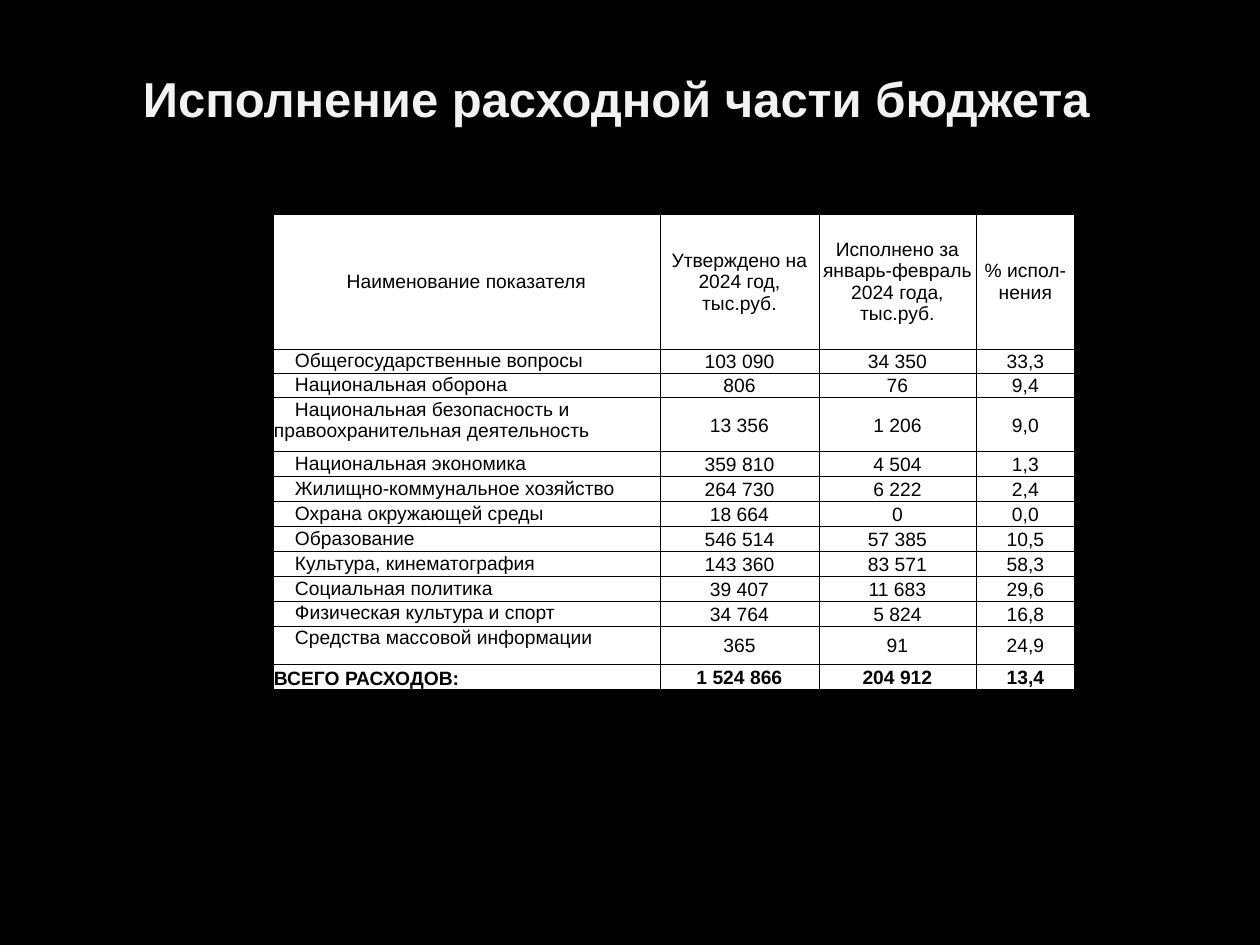
"""Build the slide on budget expenditure with python-pptx."""
from lxml import etree
from pptx import Presentation, util as u
from pptx.dml.color import RGBColor
from pptx.enum import text
from pptx.oxml import ns

BLACK = RGBColor(0x00, 0x00, 0x00)
WHITE = RGBColor(0xFF, 0xFF, 0xFF)
PALE = RGBColor(0xF2, 0xF2, 0xF2)
LEFT, CENTER = text.PP_ALIGN.LEFT, text.PP_ALIGN.CENTER
TOP, MIDDLE, BOTTOM = text.MSO_ANCHOR.TOP, text.MSO_ANCHOR.MIDDLE, text.MSO_ANCHOR.BOTTOM


def px(n):
    return u.Emu(round(n * 914400 / 126))


def write(paragraph, words, size, color, bold, align):
    paragraph.alignment = align
    run = paragraph.add_run()
    run.text = words
    run.font.color.rgb = color
    for key, value in {"name": "Arial", "size": u.Pt(size), "bold": bold}.items():
        setattr(run.font, key, value)


BUDGET = [
    ("Наименование показателя", "Утверждено на 2024 год, тыс.руб.",
     "Исполнено за январь-февраль 2024 года, тыс.руб.", "% испол-нения"),
    ("Общегосударственные вопросы", "103 090", "34 350", "33,3"),
    ("Национальная оборона", "806", "76", "9,4"),
    ("Национальная безопасность и правоохранительная деятельность", "13 356", "1 206", "9,0"),
    ("Национальная экономика", "359 810", "4 504", "1,3"),
    ("Жилищно-коммунальное хозяйство", "264 730", "6 222", "2,4"),
    ("Охрана окружающей среды", "18 664", "0", "0,0"),
    ("Образование", "546 514", "57 385", "10,5"),
    ("Культура, кинематография", "143 360", "83 571", "58,3"),
    ("Социальная политика", "39 407", "11 683", "29,6"),
    ("Физическая культура и спорт", "34 764", "5 824", "16,8"),
    ("Средства массовой информации", "365", "91", "24,9"),
    ("ВСЕГО РАСХОДОВ:", "1 524 866", "204 912", "13,4"),
]
COLUMN_WIDTHS = [387, 159, 157, 99]
ROW_HEIGHTS = [135, 24, 25, 54] + [25] * 7 + [38, 25]
TOTAL_ROW = len(BUDGET) - 1

prs = Presentation()
prs.slide_width, prs.slide_height = px(1260), px(945)
slide = prs.slides.add_slide(prs.slide_layouts[5])
slide.background.fill.solid()
slide.background.fill.fore_color.rgb = BLACK

title = slide.shapes.title
for side, length in {"left": 63, "top": 37, "width": 1134, "height": 121}.items():
    setattr(title, side, px(length))
title.text_frame.vertical_anchor = MIDDLE
title.text_frame.margin_right = px(40)
write(title.text_frame.paragraphs[0], "Исполнение расходной части бюджета", 28, PALE, True, CENTER)

budget = slide.shapes.add_table(
    len(BUDGET), len(COLUMN_WIDTHS), px(273), px(214),
    px(sum(COLUMN_WIDTHS)), px(sum(ROW_HEIGHTS))).table
for column, width in zip(budget.columns, COLUMN_WIDTHS):
    column.width = px(width)
for row, height in zip(budget.rows, ROW_HEIGHTS):
    row.height = px(height)

for r, entries in enumerate(BUDGET):
    for c, words in enumerate(entries):
        cell = budget.cell(r, c)
        is_label = c == 0 and r > 0
        anchor = MIDDLE
        if is_label:
            anchor = BOTTOM if r == TOTAL_ROW else TOP
        cell_format = {"margin_left": px(1), "margin_right": px(1), "margin_top": px(1),
                       "margin_bottom": 0, "vertical_anchor": anchor}
        for key, value in cell_format.items():
            setattr(cell, key, value)
        paragraph = cell.text_frame.paragraphs[0]
        write(paragraph, words, 11, BLACK, r == TOTAL_ROW, LEFT if is_label else CENTER)
        if is_label and r < TOTAL_ROW:
            properties = paragraph._p.get_or_add_pPr()
            properties.set("marL", "0")
            properties.set("indent", str(px(21)))
        borders = cell._tc.get_or_add_tcPr()
        for edge in ("a:lnL", "a:lnR", "a:lnT", "a:lnB"):
            border = etree.SubElement(borders, ns.qn(edge), w=str(u.Pt(0.5)))
            paint = etree.SubElement(border, ns.qn("a:solidFill"))
            etree.SubElement(paint, ns.qn("a:srgbClr"), val=str(BLACK))
        cell.fill.solid()
        cell.fill.fore_color.rgb = WHITE

prs.save("out.pptx")
